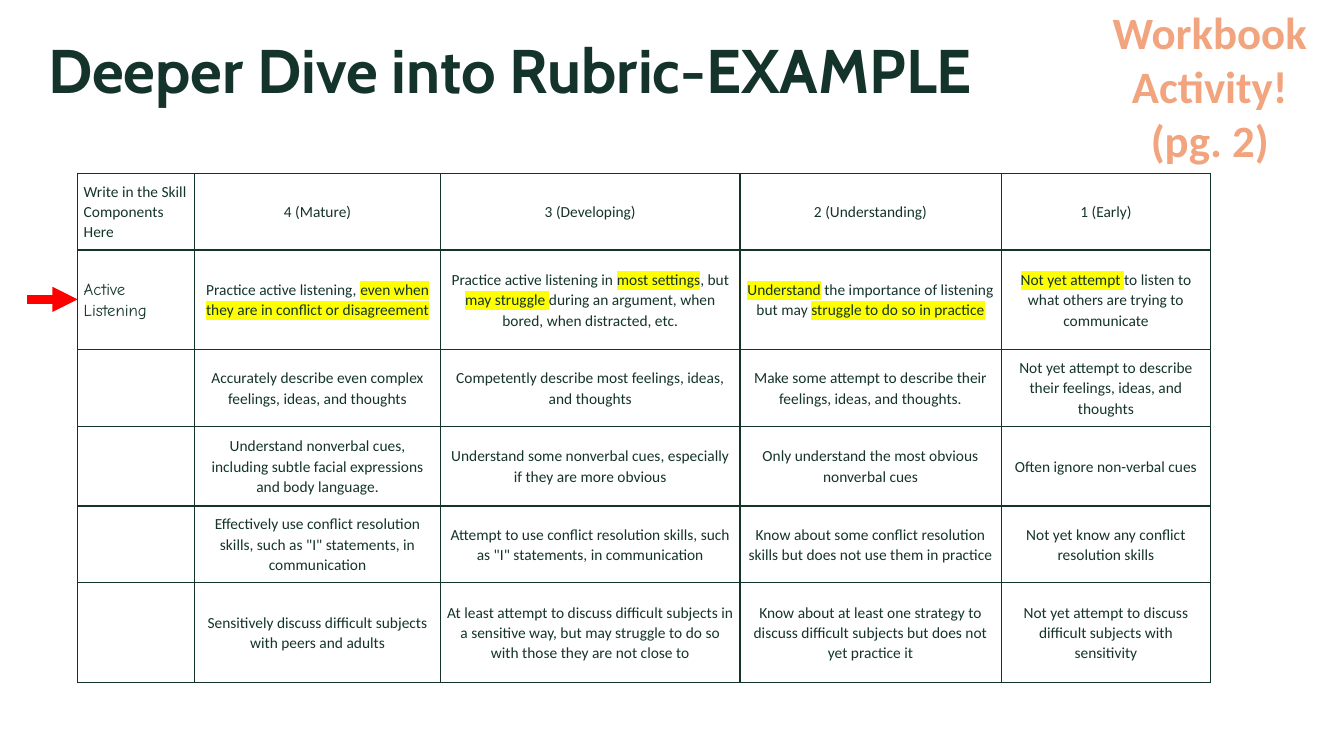
from lxml.etree import SubElement
from pptx import Presentation
from pptx.dml.color import RGBColor
from pptx.enum.shapes import MSO_CONNECTOR as Connector
from pptx.enum.text import MSO_ANCHOR as Anchor, PP_ALIGN as Align
from pptx.oxml import parse_xml
from pptx.oxml.ns import nsdecls, qn
from pptx.util import Emu, Pt

PX = 9144  # 100 px to the inch
GREEN = RGBColor(0x14, 0x34, 0x2B)
PEACH = RGBColor(0xF1, 0xA4, 0x7D)
RED = RGBColor(0xFF, 0x00, 0x00)
YELLOW = RGBColor(0xFF, 0xFF, 0x00)

TITLE = {"name": "Cabin", "size": Pt(44), "bold": True}
NOTE = {"name": "Calibri", "size": Pt(32), "bold": True}
BODY = {"name": "Calibri", "size": Pt(11)}
SKILL = {"name": "Comic Neue", "size": Pt(12)}

COLUMNS = [116, 244, 297, 259, 208]
ROWS = [76, 99, 76, 79, 76, 99]
# Text between bars is highlighted.
RUBRIC = [
    ["Write in the Skill Components Here", "4 (Mature)", "3 (Developing)",
     "2 (Understanding)", "1 (Early)"],
    ["Active Listening",
     "Practice active listening, |even when they are in conflict or disagreement|",
     "Practice active listening in |most settings|, but |may struggle |during an "
     "argument, when bored, when distracted, etc.",
     "|Understand| the importance of listening but may |struggle to do so in practice|",
     "|Not yet attempt |to listen to what others are trying to communicate"],
    ["",
     "Accurately describe even complex feelings, ideas, and thoughts",
     "Competently describe most feelings, ideas, and thoughts",
     "Make some attempt to describe their feelings, ideas, and thoughts.",
     "Not yet attempt to describe their feelings, ideas, and thoughts"],
    ["",
     "Understand nonverbal cues, including subtle facial expressions and body language.",
     "Understand some nonverbal cues, especially if they are more obvious",
     "Only understand the most obvious nonverbal cues",
     "Often ignore non-verbal cues"],
    ["",
     'Effectively use conflict resolution skills, such as "I" statements, in communication',
     'Attempt to use conflict resolution skills, such as "I" statements, in communication',
     "Know about some conflict resolution skills but does not use them in practice",
     "Not yet know any conflict resolution skills"],
    ["",
     "Sensitively discuss difficult subjects with peers and adults",
     "At least attempt to discuss difficult subjects in a sensitive way, but may "
     "struggle to do so with those they are not close to",
     "Know about at least one strategy to discuss difficult subjects but does not "
     "yet practice it",
     "Not yet attempt to discuss difficult subjects with sensitivity"],
]


def px(*lengths):
    return [Emu(length * PX) for length in lengths]


def apply(target, values):
    for name, value in values.items():
        setattr(target, name, value)


def write(para, text, font, color):
    """Fill a paragraph, highlighting every second piece between bars."""
    for index, piece in enumerate(text.split("|")):
        if not piece:
            continue
        span = para.add_run()
        span.text = piece
        apply(span.font, font)
        span.font.color.rgb = color
        if index % 2:
            fill = span.font._element.find(qn("a:solidFill"))
            fill.addnext(parse_xml(
                f'<a:highlight {nsdecls("a")}><a:srgbClr val="{YELLOW}"/></a:highlight>'))


def add_text(page, box, text, font, color, frame_format, para_format):
    frame = page.shapes.add_textbox(*px(*box)).text_frame
    apply(frame, {"word_wrap": True, **frame_format})
    apply(frame.paragraphs[0], para_format)
    write(frame.paragraphs[0], text, font, color)


def set_borders(cell):
    properties = cell._tc.get_or_add_tcPr()
    for position, side in enumerate(("lnL", "lnR", "lnT", "lnB")):
        properties.insert(position, parse_xml(
            f'<a:{side} {nsdecls("a")} w="{Pt(1)}"><a:solidFill>'
            f'<a:srgbClr val="{GREEN}"/></a:solidFill></a:{side}>'))


def add_rubric(page, left, top):
    table = page.shapes.add_table(
        len(ROWS), len(COLUMNS), *px(left, top, sum(COLUMNS), sum(ROWS))).table
    apply(table, {"first_row": False, "horz_banding": False})
    for column, width in zip(table.columns, px(*COLUMNS)):
        column.width = width
    for row, height in zip(table.rows, px(*ROWS)):
        row.height = height
    margin, = px(6)
    for r, texts in enumerate(RUBRIC):
        for c, text in enumerate(texts):
            cell = table.cell(r, c)
            cell.fill.background()
            apply(cell, {"vertical_anchor": Anchor.MIDDLE,
                         "margin_left": margin, "margin_right": margin,
                         "margin_top": margin, "margin_bottom": margin})
            set_borders(cell)
            is_skill = c == 0 and r > 0
            para = cell.text_frame.paragraphs[0]
            apply(para, {"alignment": Align.CENTER if c else Align.LEFT,
                         "line_spacing": 1.07,
                         "space_after": Pt(0 if is_skill else 6)})
            write(para, text, SKILL if is_skill else BODY, GREEN)


def add_arrow(page, left, y, width):
    arrow = page.shapes.add_connector(
        Connector.STRAIGHT, *px(left, y, left + width, y))
    arrow.line.color.rgb = RED
    arrow.line.width = Pt(6)
    SubElement(arrow.line._get_or_add_ln(), qn("a:tailEnd"), type="triangle")
    SubElement(arrow._element.spPr, qn("a:effectLst"))


def add_rubric_slide(deck):
    page = deck.slides.add_slide(deck.slide_layouts[6])
    add_text(page, (38, 0, 1055, 145), "Deeper Dive into Rubric-EXAMPLE", TITLE,
             GREEN, {"vertical_anchor": Anchor.MIDDLE}, {"line_spacing": 0.9})
    add_rubric(page, 77, 172)
    add_text(page, (1093, 0, 214, 172), "Workbook Activity! (pg. 2)", NOTE,
             PEACH, {}, {"alignment": Align.CENTER})
    add_arrow(page, 27, 297, 50)


def main():
    deck = Presentation()
    deck.slide_width, deck.slide_height = px(1333, 750)
    add_rubric_slide(deck)
    deck.save("out.pptx")


if __name__ == "__main__":
    main()
